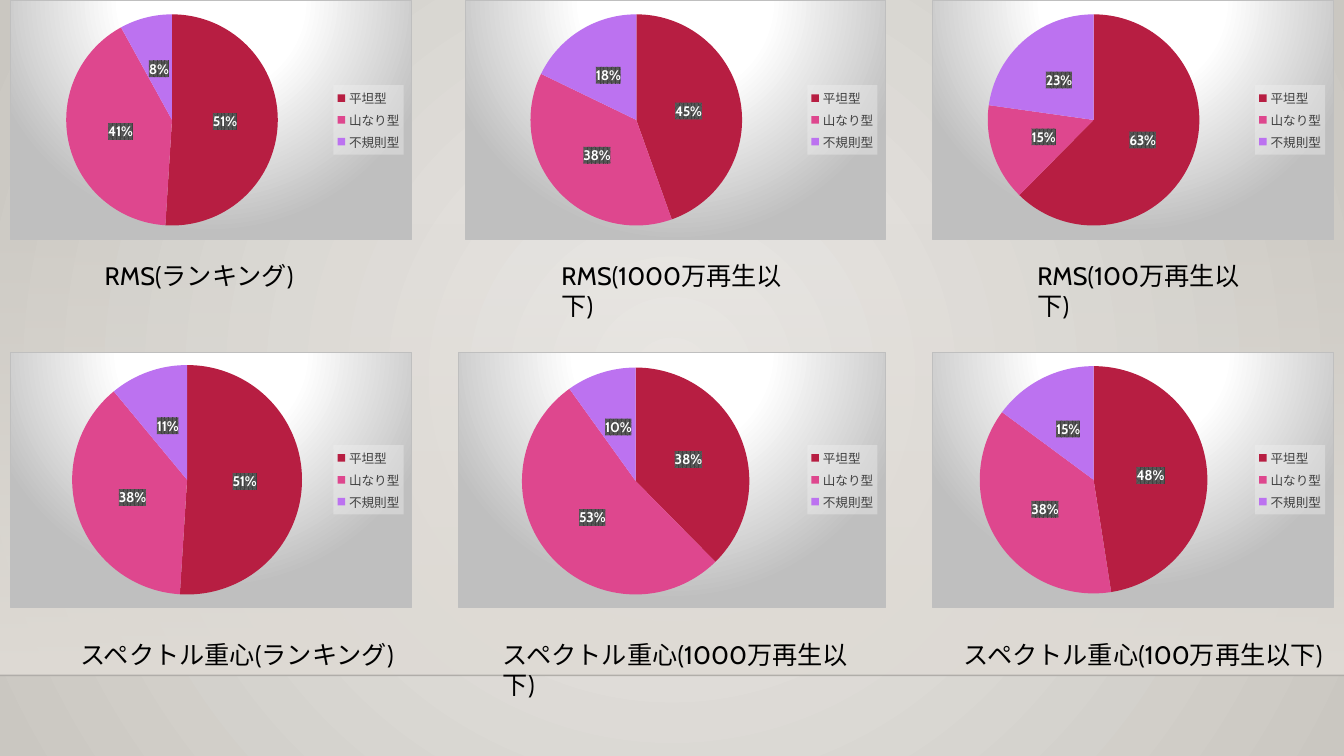
from dataclasses import dataclass

from pptx import Presentation
from pptx.chart.data import CategoryChartData
from pptx.dml.color import RGBColor
from pptx.enum.chart import XL_CHART_TYPE, XL_LABEL_POSITION, XL_LEGEND_POSITION
from pptx.enum.shapes import MSO_CONNECTOR, MSO_SHAPE
from pptx.oxml import parse_xml
from pptx.oxml.ns import nsdecls, qn
from pptx.util import Inches, Pt

PIE = XL_CHART_TYPE.PIE
CENTER = XL_LABEL_POSITION.CENTER
RIGHT = XL_LEGEND_POSITION.RIGHT
STRAIGHT = MSO_CONNECTOR.STRAIGHT
RECT = MSO_SHAPE.RECTANGLE


@dataclass(frozen=True)
class Theme:
    """Colours, type sizes and font of the slide."""
    font: str = "Cabin"
    ink: str = "000000"
    light: str = "FFFFFF"
    edge: str = "BFBFBF"
    glow: tuple = ((0, "ECEAE7", 100), (100, "CAC7C1", 100))
    band: tuple = ((0, "DFDBD5", 0), (100, "DFDBD5", 100))
    panel: tuple = ((0, "FFFFFF", 100), (39, "FFFFFF", 100), (100, "BFBFBF", 100))
    slices: tuple = ("B71E42", "DE478E", "BC72F0")
    rule: str = "000001"
    key: str = "404040"
    key_fill: str = "F2F2F2"
    tag: str = "404040"
    tag_dot: str = "595959"
    title: int = 18
    label: int = 10
    small: int = 9


THEME = Theme()
KINDS = ("平坦型", "山なり型", "不規則型")
ROWS = (
    dict(name="RMS", top=0, high=2.38, text=2.53, cells=(
        ("ランキング", 0.1, 3.99, 0.94, 2.09, (51, 41, 8), None),
        ("1000万再生以下", 4.61, 4.18, 5.47, 2.6, (45, 38, 18), None),
        ("100万再生以下", 9.24, 3.99, 10.19, 2.47, (63, 15, 23), None))),
    dict(name="スペクトル重心", top=3.49, high=2.54, text=6.29, cells=(
        ("ランキング", 0.1, 3.99, 0.7, 3.4, (51, 38, 11), (0.15, 0.05, 0.58, 0.9)),
        ("1000万再生以下", 4.54, 4.25, 4.89, 3.9, (38, 53, 10), (0.14, 0.06, 0.55, 0.89)),
        ("100万再生以下", 9.24, 3.99, 9.46, 3.77, (48, 38, 15), None))),
)


def tint(code, alpha=100):
    """Return the XML of a colour with its opacity in percent."""
    return f'<a:srgbClr val="{code}"><a:alpha val="{alpha * 1000}"/></a:srgbClr>'


def blend(stops, rect=None):
    """Return gradient XML, circular when a focus rectangle is given."""
    marks = "".join(f'<a:gs pos="{at * 1000}">{tint(code, alpha)}</a:gs>'
                    for at, code, alpha in stops)
    way = '<a:lin ang="5400000" scaled="0"/>'
    if rect:
        sides = " ".join(f'{side}="{size * 1000}"' for side, size in zip("ltrb", rect))
        way = f'<a:path path="circle"><a:fillToRect {sides}/></a:path>'
    return f'<a:gradFill {nsdecls("a")} rotWithShape="1"><a:gsLst>{marks}</a:gsLst>{way}</a:gradFill>'


def dress(owner, inner):
    """Put shape properties ahead of the text properties of a chart part."""
    owner.find(qn("c:txPr")).addprevious(
        parse_xml(f'<c:spPr {nsdecls("c", "a")}>{inner}</c:spPr>'))


def style(font, size, code, bold=False):
    """Set the face, size, weight and colour of a font."""
    for key, value in dict(name=THEME.font, size=Pt(size), bold=bold).items():
        setattr(font, key, value)
    font.color.rgb = RGBColor.from_string(code)


def swap(fill, owner, xml):
    """Replace the fill of an element with a gradient."""
    fill.solid()
    old = owner.find(".//" + qn("a:solidFill"))
    old.getparent().replace(old, parse_xml(xml))


def scene(slide, wide, top, high):
    """Draw the backdrop, the fading band and the rule under it."""
    swap(slide.background.fill, slide._element.cSld, blend(THEME.glow, (50, 50, 50, 50)))
    band = slide.shapes.add_shape(RECT, 0, Inches(top), Inches(wide), Inches(high))
    band.shadow.inherit = False
    band.line.fill.background()
    swap(band.fill, band._element.spPr, blend(THEME.band))
    base = Inches(top + high)
    rule = slide.shapes.add_connector(STRAIGHT, 0, base, Inches(wide), base)
    rule.line.width = Pt(1)
    rule.line.color.rgb = RGBColor.from_string(THEME.rule)
    props = rule._element.spPr
    shade = props.find(".//" + qn("a:srgbClr"))
    shade.append(parse_xml(f'<a:alpha {nsdecls("a")} val="20000"/>'))
    props.append(parse_xml(f'<a:effectLst {nsdecls("a")}/>'))


def place(chart, box):
    """Fix the inner plot area as shares of the chart."""
    area = chart._chartSpace.chart.plotArea
    for old in area.findall(qn("c:layout")):
        area.remove(old)
    modes = "".join(f'<c:{axis}Mode val="edge"/>' for axis in "xy")
    sizes = "".join(f'<c:{key} val="{size}"/>' for key, size in zip("xywh", box))
    area.insert(0, parse_xml(
        f'<c:layout {nsdecls("c")}><c:manualLayout><c:layoutTarget val="inner"/>'
        f'{modes}{sizes}</c:manualLayout></c:layout>'))


def pie(slide, left, top, wide, high, shares, box):
    """Draw one pie chart with its legend and percent tags."""
    data = CategoryChartData()
    data.categories = KINDS
    data.add_series("Series 1", shares)
    chart = slide.shapes.add_chart(
        PIE, Inches(left), Inches(top), Inches(wide), Inches(high), data).chart
    style(chart.font, THEME.label, THEME.ink)
    dress(chart._chartSpace, blend(THEME.panel, (50, -80, 50, 180)) +
          f'<a:ln w="9525"><a:solidFill>{tint(THEME.edge)}</a:solidFill></a:ln>')
    chart.has_title = False
    chart.has_legend = True
    legend = chart.legend
    legend.position = RIGHT
    legend.include_in_layout = False
    style(legend.font, THEME.small, THEME.key)
    dress(legend._element, f'<a:solidFill>{tint(THEME.key_fill, 39)}</a:solidFill>')
    plot = chart.plots[0]
    plot.vary_by_categories = True
    series = plot.series[0]
    for spot, code in enumerate(THEME.slices):
        fill = series.points[spot].format.fill
        fill.solid()
        fill.fore_color.rgb = RGBColor.from_string(code)
    tags = series.data_labels
    look = dict(show_value=True, number_format='0"%"',
                number_format_is_linked=False, position=CENTER)
    for key, value in look.items():
        setattr(tags, key, value)
    style(tags.font, THEME.label, THEME.light, True)
    dress(tags._element, f'<a:pattFill prst="pct75"><a:fgClr>{tint(THEME.tag)}</a:fgClr>'
          f'<a:bgClr>{tint(THEME.tag_dot)}</a:bgClr></a:pattFill>')
    if box:
        place(chart, box)


def title(slide, left, top, wide, words):
    """Write the caption under a chart."""
    frame = slide.shapes.add_textbox(
        Inches(left), Inches(top), Inches(wide), Inches(0.4)).text_frame
    frame.word_wrap = True
    run = frame.paragraphs[0].add_run()
    run.text = words
    style(run.font, THEME.title, THEME.ink)


def main():
    """Build the slide and save it."""
    deck = Presentation()
    deck.slide_width, deck.slide_height = Inches(13.33), Inches(7.5)
    slide = deck.slides.add_slide(deck.slide_layouts[6])
    scene(slide, 13.33, 2.21, 4.49)
    for row in ROWS:
        for group, left, wide, start, span, shares, box in row["cells"]:
            pie(slide, left, row["top"], wide, row["high"], shares, box)
            title(slide, start, row["text"], span, f'{row["name"]}({group})')
    deck.save("out.pptx")


if __name__ == "__main__":
    main()
